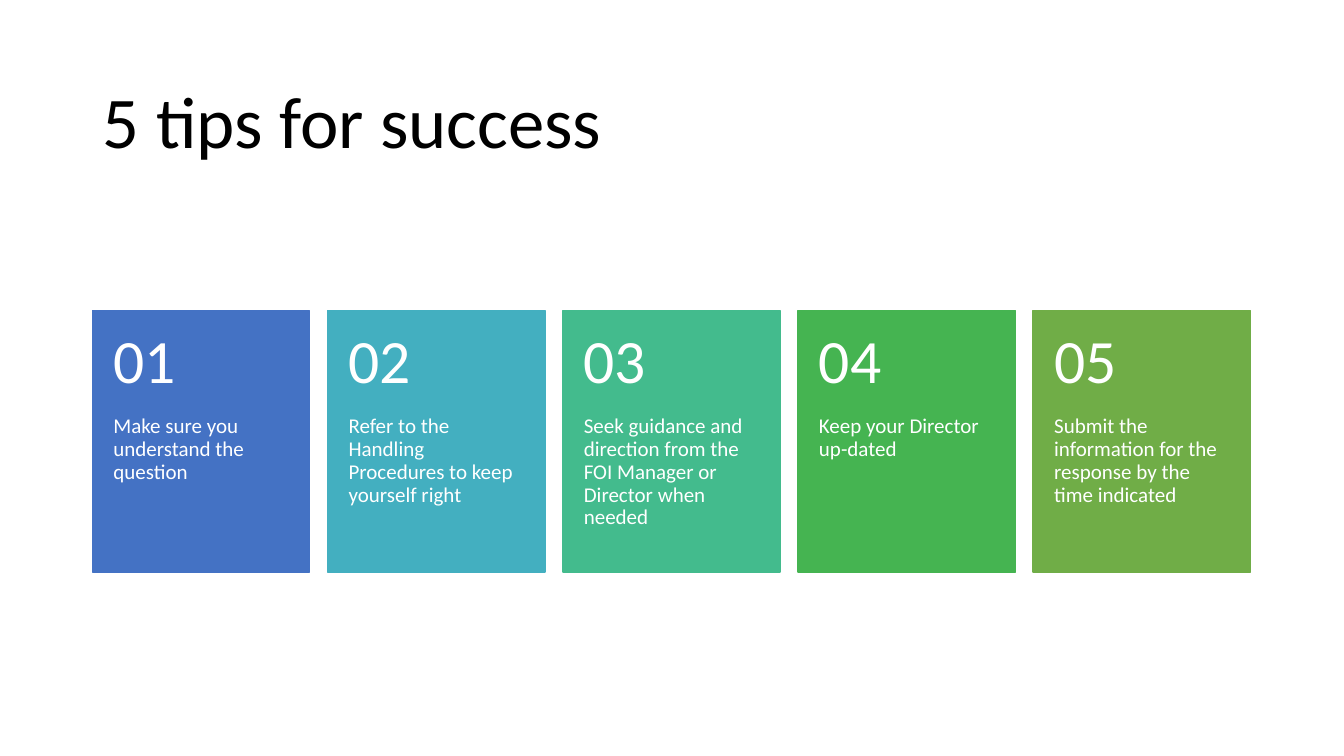
from dataclasses import dataclass

from pptx import Presentation
from pptx import util as u
from pptx.dml.color import RGBColor
from pptx.enum import shapes, text

EMU_PER_PX = 9525
FONT = "Calibri"
WHITE = "FFFFFF"

CARD_LEFT, CARD_TOP = 88, 296
CARD_WIDTH, CARD_HEIGHT = 207, 249
CARD_PITCH = 224
NUMBER_HEIGHT = 100


@dataclass(frozen=True)
class Box:
    left: int
    top: int
    width: int
    height: int

    def emu(self) -> list[int]:
        return [px(n) for n in (self.left, self.top, self.width, self.height)]


@dataclass(frozen=True)
class TextStyle:
    """Look of a text block; insets run left, top, right, bottom in px."""
    size: int
    color: str
    anchor: text.MSO_ANCHOR
    insets: tuple[int, int, int, int]
    space_after: float = 0


@dataclass(frozen=True)
class Tip:
    advice: str
    color: str


TITLE_STYLE = TextStyle(52, "000000", text.MSO_ANCHOR.MIDDLE, (10, 5, 10, 5))
NUMBER_STYLE = TextStyle(44, WHITE, text.MSO_ANCHOR.MIDDLE, (20, 17, 20, 17), 15.4)
ADVICE_STYLE = TextStyle(15, WHITE, text.MSO_ANCHOR.TOP, (20, 0, 20, 35), 5.25)

TIPS = [
    Tip("Make sure you understand the question", "4472C4"),
    Tip("Refer to the Handling Procedures to keep yourself right", "43AFC0"),
    Tip("Seek guidance and direction from the FOI Manager or Director when needed",
        "43BB8D"),
    Tip("Keep your Director up-dated", "45B451"),
    Tip("Submit the information for the response by the time indicated", "70AD47"),
]


def px(length: int) -> int:
    return u.Emu(length * EMU_PER_PX)


def rgb(color: str) -> RGBColor:
    return RGBColor.from_string(color)


def add_text(slide, box: Box, wording: str, style: TextStyle) -> None:
    frame = slide.shapes.add_textbox(*box.emu()).text_frame
    frame.word_wrap = True
    frame.vertical_anchor = style.anchor
    (frame.margin_left, frame.margin_top,
     frame.margin_right, frame.margin_bottom) = map(px, style.insets)
    paragraph = frame.paragraphs[0]
    paragraph.text = wording
    paragraph.line_spacing = 0.9
    paragraph.space_after = u.Pt(style.space_after)
    paragraph.font.name = FONT
    paragraph.font.size = u.Pt(style.size)
    paragraph.font.color.rgb = rgb(style.color)


def add_card(slide, index: int, tip: Tip) -> None:
    left = CARD_LEFT + index * CARD_PITCH
    box = Box(left, CARD_TOP, CARD_WIDTH, CARD_HEIGHT)
    card = slide.shapes.add_shape(shapes.MSO_SHAPE.RECTANGLE, *box.emu())
    card.shadow.inherit = False
    card.fill.solid()
    card.fill.fore_color.rgb = rgb(tip.color)
    card.line.color.rgb = rgb(tip.color)
    card.line.width = u.Pt(1)

    advice_box = Box(left, CARD_TOP + NUMBER_HEIGHT,
                     CARD_WIDTH, CARD_HEIGHT - NUMBER_HEIGHT)
    add_text(slide, advice_box, tip.advice, ADVICE_STYLE)
    number_box = Box(left, CARD_TOP, CARD_WIDTH, NUMBER_HEIGHT)
    add_text(slide, number_box, f"{index + 1:02}", NUMBER_STYLE)


def main() -> None:
    deck = Presentation()
    deck.slide_width, deck.slide_height = px(1280), px(720)
    slide = deck.slides.add_slide(deck.slide_layouts[6])
    add_text(slide, Box(88, 59, 1104, 119), "5 tips for success", TITLE_STYLE)
    for index, tip in enumerate(TIPS):
        add_card(slide, index, tip)
    deck.save("out.pptx")


if __name__ == "__main__":
    main()
